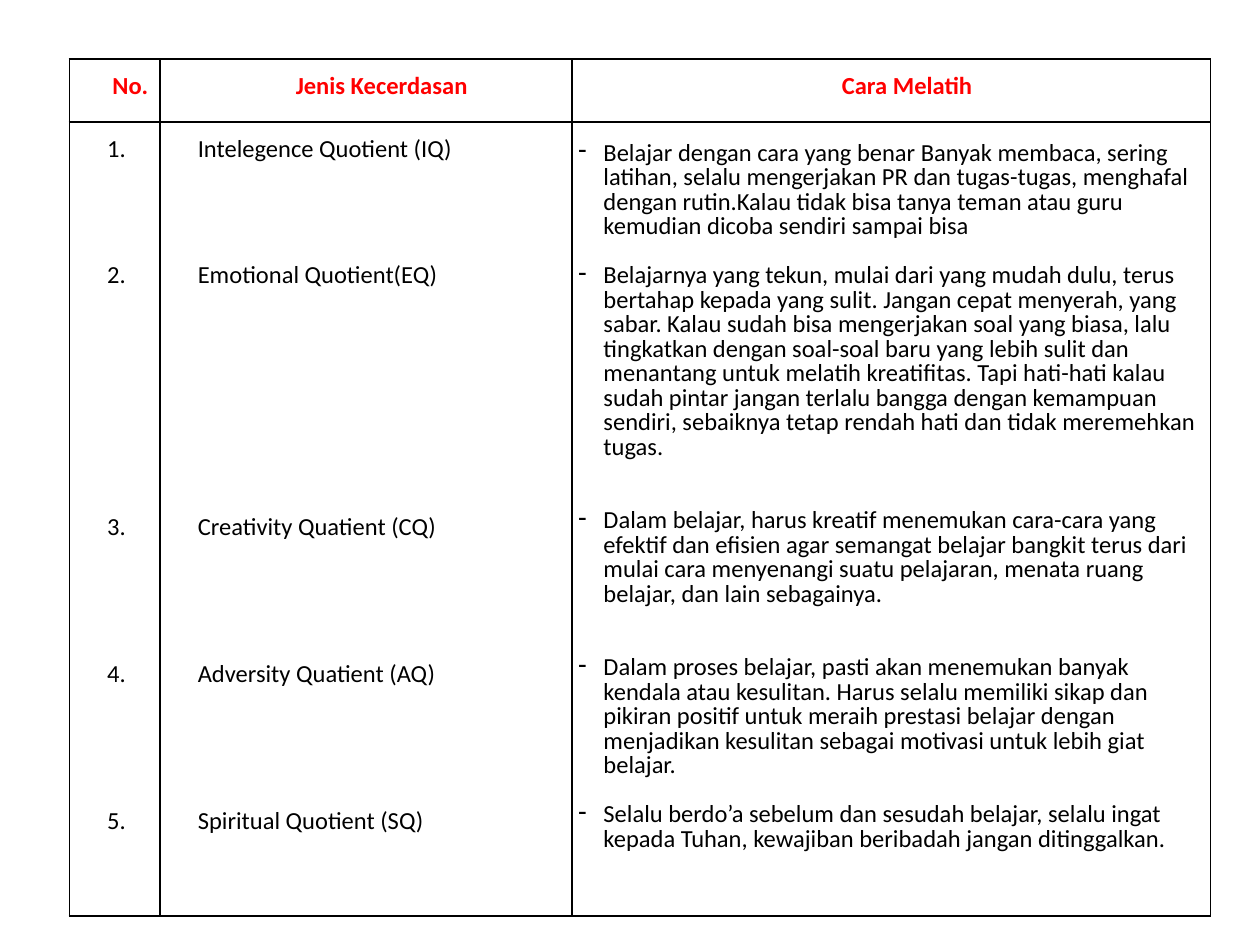
from dataclasses import dataclass

from lxml.etree import SubElement
from pptx import Presentation
from pptx.dml.color import RGBColor
from pptx.enum.text import PP_ALIGN
from pptx.oxml.ns import qn
from pptx.table import _Cell
from pptx.util import Inches, Pt

BLACK = RGBColor(0x00, 0x00, 0x00)
RED = RGBColor(0xFF, 0x00, 0x00)

COLUMN_WIDTHS = (0.72, 3.27, 5.07)
ROW_HEIGHTS = (0.5, 6.3)
HEADINGS = ("No.", "Jenis Kecerdasan", "Cara Melatih")
LABEL_LINE = 12
METHOD_LINE = 14


@dataclass
class Intelligence:
    name: str
    method: str
    label_gap: int  # empty label lines above the name
    method_gap: int  # empty method lines above the method


INTELLIGENCES = (
    Intelligence(
        "Intelegence Quotient (IQ)",
        "Belajar dengan cara yang benar Banyak membaca, sering latihan, selalu "
        "mengerjakan PR dan tugas-tugas, menghafal dengan rutin.Kalau tidak bisa "
        "tanya teman atau guru kemudian dicoba sendiri sampai bisa",
        0, 0),
    Intelligence(
        "Emotional Quotient(EQ)",
        "Belajarnya yang tekun, mulai dari yang mudah dulu, terus bertahap kepada "
        "yang sulit. Jangan cepat menyerah, yang sabar. Kalau sudah bisa mengerjakan "
        "soal yang biasa, lalu tingkatkan dengan soal-soal baru yang lebih sulit dan "
        "menantang untuk melatih kreatifitas. Tapi hati-hati kalau sudah pintar "
        "jangan terlalu bangga dengan kemampuan sendiri, sebaiknya tetap rendah hati "
        "dan tidak meremehkan tugas.",
        5, 1),
    Intelligence(
        "Creativity Quatient (CQ)",
        "Dalam belajar, harus kreatif menemukan cara-cara yang efektif dan efisien "
        "agar semangat belajar bangkit terus dari mulai cara menyenangi suatu "
        "pelajaran, menata ruang belajar, dan lain sebagainya.",
        11, 2),
    Intelligence(
        "Adversity Quatient (AQ)",
        "Dalam proses belajar, pasti akan menemukan banyak kendala atau kesulitan. "
        "Harus selalu memiliki sikap dan pikiran positif untuk meraih prestasi "
        "belajar dengan menjadikan kesulitan sebagai motivasi untuk lebih giat "
        "belajar.",
        6, 2),
    Intelligence(
        "Spiritual Quotient (SQ)",
        "Selalu berdo’a sebelum dan sesudah belajar, selalu ingat kepada Tuhan, "
        "kewajiban beribadah jangan ditinggalkan.",
        6, 1),
)


def format_cell(cell: _Cell) -> None:
    """Set the margins, black borders and empty fill of a cell."""
    cell.margin_left = cell.margin_right = Inches(0.05)
    cell.margin_top, cell.margin_bottom = Pt(LABEL_LINE), 0
    properties = cell._tc.get_or_add_tcPr()
    for side in ("a:lnL", "a:lnR", "a:lnT", "a:lnB"):
        line = SubElement(properties, qn(side), w=str(Pt(1)))
        fill = SubElement(line, qn("a:solidFill"))
        SubElement(fill, qn("a:srgbClr"), val=str(BLACK))
    cell.fill.background()


def add_text(cell: _Cell, text: str, *, align: PP_ALIGN = PP_ALIGN.LEFT,
             color: RGBColor = BLACK, bold: bool = False, line: int = LABEL_LINE,
             gap: int = 0, left: float = 0.25, bullet: str = "") -> None:
    """Add a paragraph, using the cell's first one while it is empty."""
    frame = cell.text_frame
    paragraph = frame.paragraphs[0] if not frame.text else frame.add_paragraph()
    paragraph.alignment = align
    paragraph.line_spacing = Pt(line)
    paragraph.space_before = Pt(gap * line)
    properties = paragraph._p.get_or_add_pPr()
    properties.set("marL", str(Inches(left)))
    properties.set("indent", str(-Inches(left) if bullet else 0))
    if bullet:
        SubElement(properties, qn("a:buChar"), char=bullet)
    run = paragraph.add_run()
    run.text = text
    run.font.name = "Calibri"
    run.font.size = Pt(14)
    run.font.bold = bold
    run.font.color.rgb = color


def main() -> None:
    presentation = Presentation()
    presentation.slide_width = Inches(10)
    presentation.slide_height = Inches(7.5)
    slide = presentation.slides.add_slide(presentation.slide_layouts[6])

    # Table grid
    table = slide.shapes.add_table(
        len(ROW_HEIGHTS), len(COLUMN_WIDTHS), Inches(0.55), Inches(0.47),
        Inches(sum(COLUMN_WIDTHS)), Inches(sum(ROW_HEIGHTS))).table
    table.first_row = table.horz_banding = False
    for column, width in zip(table.columns, COLUMN_WIDTHS):
        column.width = Inches(width)
    for row, height in zip(table.rows, ROW_HEIGHTS):
        row.height = Inches(height)
    for cell in table.iter_cells():
        format_cell(cell)

    # Header row
    for index, heading in enumerate(HEADINGS):
        add_text(table.cell(0, index), heading, align=PP_ALIGN.CENTER,
                 color=RED, bold=True)

    # Body row: numbers, kinds of intelligence and ways to train them
    number_cell, name_cell, method_cell = table.rows[1].cells
    for number, item in enumerate(INTELLIGENCES, start=1):
        add_text(number_cell, f"{number}.", align=PP_ALIGN.JUSTIFY, gap=item.label_gap)
        add_text(name_cell, item.name, gap=item.label_gap)
        add_text(method_cell, item.method, line=METHOD_LINE, gap=item.method_gap,
                 left=0.2, bullet="-")

    presentation.save("out.pptx")


if __name__ == "__main__":
    main()
